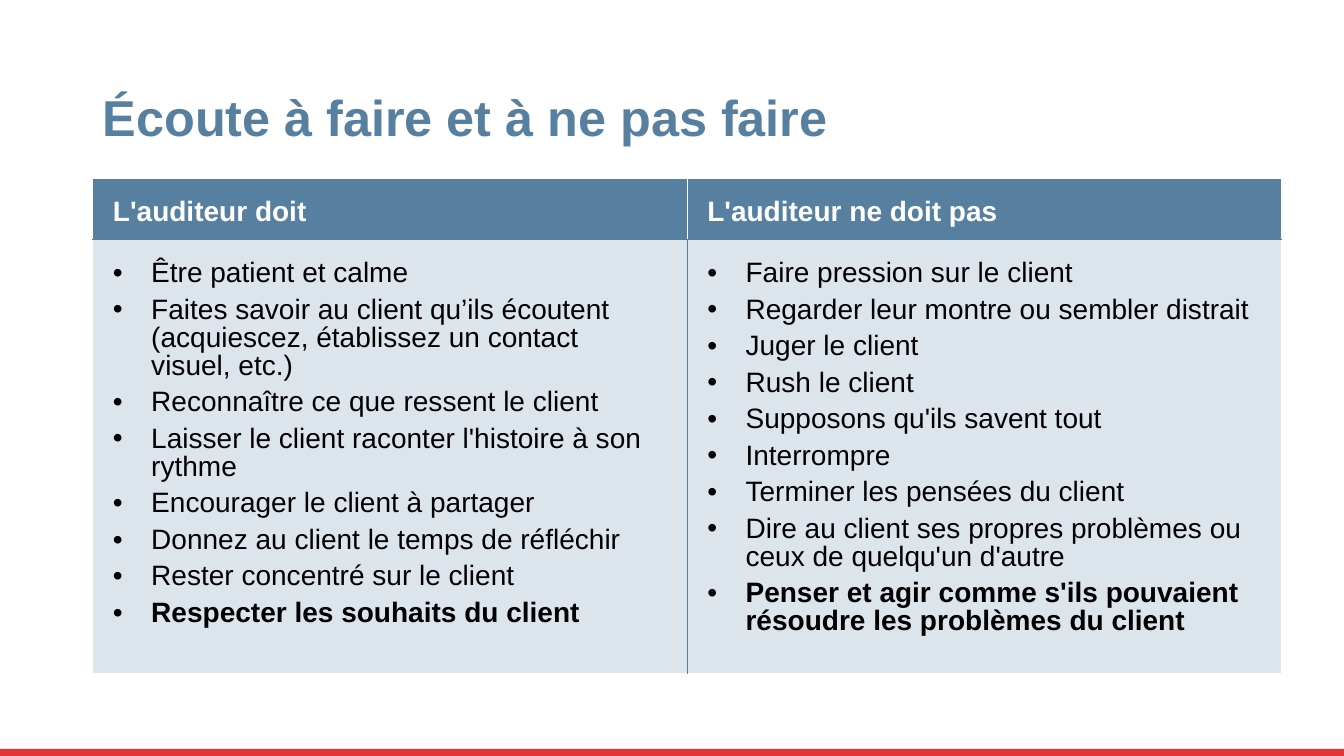
from dataclasses import dataclass

from lxml.etree import SubElement
from pptx import Presentation
from pptx.dml.color import RGBColor
from pptx.enum.shapes import MSO_SHAPE as Shape
from pptx.enum.text import MSO_ANCHOR as Anchor
from pptx.oxml import parse_xml
from pptx.oxml.ns import nsdecls, qn
from pptx.util import Inches, Pt

BLUE, PALE, RED, WHITE, BLACK = "577F9F", "DDE5EC", "E73439", "FFFFFF", "000000"


@dataclass
class Column:
    heading: str
    advice: list[str]
    key_advice: str
    left_border: str
    right_border: str


COLUMNS = [
    Column(
        "L'auditeur doit",
        [
            "Être patient et calme",
            "Faites savoir au client qu’ils écoutent (acquiescez, établissez un contact \nvisuel, etc.)",
            "Reconnaître ce que ressent le client",
            "Laisser le client raconter l'histoire à son rythme",
            "Encourager le client à partager",
            "Donnez au client le temps de réfléchir",
            "Rester concentré sur le client",
        ],
        "Respecter les souhaits du client",
        WHITE,
        BLUE,
    ),
    Column(
        "L'auditeur ne doit pas",
        [
            "Faire pression sur le client",
            "Regarder leur montre ou sembler distrait",
            "Juger le client",
            "Rush le client",
            "Supposons qu'ils savent tout",
            "Interrompre",
            "Terminer les pensées du client",
            "Dire au client ses propres problèmes ou ceux de quelqu'un d'autre",
        ],
        "Penser et agir comme s'ils pouvaient résoudre les problèmes du client",
        BLUE,
        WHITE,
    ),
]


def rgb(color: str) -> RGBColor:
    return RGBColor.from_string(color)


def write(para, text: str, size: int, color: str, bold: bool, **spacing) -> None:
    para.text = text
    for name, value in spacing.items():
        setattr(para, name, value)
    for span in para.runs:
        for name, value in {"name": "Arial", "size": Pt(size), "bold": bold}.items():
            setattr(span.font, name, value)
        span.font.color.rgb = rgb(color)


def add_bullet(para) -> None:
    props = para._p.get_or_add_pPr()
    props.set("marL", str(Inches(0.38)))
    props.set("indent", str(-Inches(0.38)))
    SubElement(props, qn("a:buFont")).set("typeface", "Arial")
    SubElement(props, qn("a:buChar")).set("char", "•")


def style_cell(cell, fill: str, top_margin: float, anchor, borders: dict[str, str]) -> None:
    margins = {"left": 0.2, "top": top_margin, "right": 0.2, "bottom": 0.05}
    for side, length in margins.items():
        setattr(cell, f"margin_{side}", Inches(length))
    cell.vertical_anchor = anchor
    cell.fill.solid()
    cell.fill.fore_color.rgb = rgb(fill)
    props = cell._tc.get_or_add_tcPr()
    for position, side in enumerate("LRTB"):
        props.insert(position, parse_xml(
            f'<a:ln{side} {nsdecls("a")} w="{Pt(1)}"><a:solidFill>'
            f'<a:srgbClr val="{borders[side]}"/></a:solidFill></a:ln{side}>'
        ))


def add_title(page, text: str) -> None:
    box = page.shapes.add_textbox(Inches(0.92), Inches(0.64), Inches(11.5), Inches(0.87))
    frame = box.text_frame
    frame.word_wrap = True
    frame.vertical_anchor = Anchor.BOTTOM
    write(frame.paragraphs[0], text, 36, BLUE, True, line_spacing=0.9)


def add_footer_band(page) -> None:
    band = page.shapes.add_shape(Shape.RECTANGLE, 0, Inches(7.43), Inches(13.33), Inches(0.07))
    band.shadow.inherit = False
    band.fill.solid()
    band.fill.fore_color.rgb = rgb(RED)
    band.line.fill.background()


def add_advice_table(page, columns: list[Column]) -> None:
    table = page.shapes.add_table(
        2, len(columns), Inches(0.92), Inches(1.77), Inches(11.79), Inches(4.91)
    ).table
    for row, height in zip(table.rows, (0.61, 4.3)):
        row.height = Inches(height)
    for index, column in enumerate(columns):
        header, body = table.cell(0, index), table.cell(1, index)
        style_cell(header, BLUE, 0.1, Anchor.MIDDLE,
                   {"L": WHITE, "R": WHITE, "T": WHITE, "B": BLUE})
        write(header.text_frame.paragraphs[0], column.heading, 20, WHITE, True, space_after=Pt(2))

        style_cell(body, PALE, 0.2, Anchor.TOP,
                   {"L": column.left_border, "R": column.right_border, "T": BLUE, "B": WHITE})
        frame = body.text_frame
        for number, text in enumerate([*column.advice, column.key_advice]):
            para = frame.add_paragraph() if number else frame.paragraphs[0]
            add_bullet(para)
            write(para, text, 20, BLACK, text == column.key_advice,
                  line_spacing=0.9, space_after=Pt(6))


def main() -> None:
    deck = Presentation()
    deck.slide_width, deck.slide_height = Inches(13.33), Inches(7.5)
    page = deck.slides.add_slide(deck.slide_layouts[6])
    add_footer_band(page)
    add_title(page, "Écoute à faire et à ne pas faire")
    add_advice_table(page, COLUMNS)
    deck.save("out.pptx")


if __name__ == "__main__":
    main()
